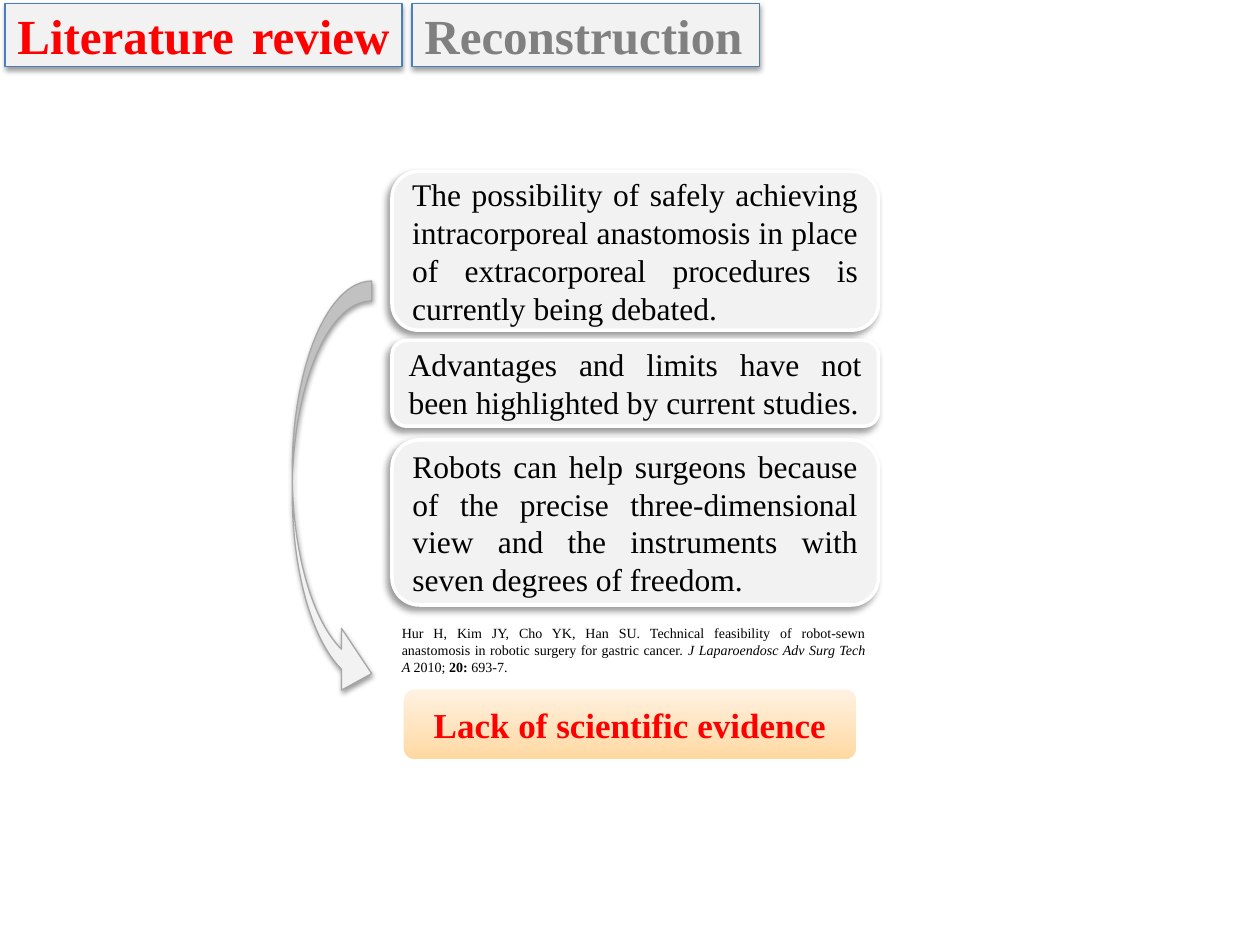
from lxml.etree import SubElement
from pptx import Presentation
from pptx.dml.color import RGBColor
from pptx.enum.shapes import MSO_SHAPE
from pptx.enum.text import MSO_ANCHOR, MSO_AUTO_SIZE, PP_ALIGN
from pptx.oxml.ns import qn
from pptx.util import Pt

WHITE = RGBColor(0xFF, 0xFF, 0xFF)
BLACK = RGBColor(0x00, 0x00, 0x00)
RED = RGBColor(0xFF, 0x00, 0x00)
GRAY = RGBColor(0x80, 0x80, 0x80)
PANEL = RGBColor(0xF2, 0xF2, 0xF2)
ARROW_LINE = RGBColor(0xA6, 0xA6, 0xA6)
TAB_LINE = RGBColor(0x4B, 0x7E, 0xBC)
PEACH = RGBColor(0xFF, 0xD8, 0xA0)
CREAM = RGBColor(0xFF, 0xF2, 0xE3)

FONT = "Times New Roman"
TAB_SHADOW = {"opacity": 38, "blur": 3.1, "distance": 1.6, "angle": 90}
STATEMENT_SHADOW = {"opacity": 40, "blur": 4, "distance": 3, "angle": 135}

TABS = [("Literature review ", RED, 226.8), ("Reconstruction ", GRAY, 198.7)]
STATEMENTS = [
    ("The possibility of safely achieving intracorporeal anastomosis in place "
     "of extracorporeal procedures is currently being debated.", 0, 90.7),
    ("Advantages and limits have not been highlighted by current studies.", 96.5, 49),
    ("Robots can help surgeons because of the precise three-dimensional view "
     "and the instruments with seven degrees of freedom.", 153.4, 94.3),
]
CITATION = [
    ("Hur H, Kim JY, Cho YK, Han SU. Technical feasibility of robot-sewn "
     "anastomosis in robotic surgery for gastric cancer. ", {}),
    ("J Laparoendosc Adv Surg Tech A ", {"italic": True}),
    ("2010; ", {}),
    ("20:", {"bold": True}),
    (" 693-7.", {}),
]


def set_values(target, values):
    for name, value in values.items():
        setattr(target, name, value)


def add_run(paragraph, text, size, color, **values):
    run = paragraph.add_run()
    run.text = text
    set_values(run.font, {"name": FONT, "size": Pt(size), **values})
    run.font.color.rgb = color


def add_shadow(shape, opacity, blur, distance, angle):
    effects = shape._element.spPr.find(qn("a:effectLst"))
    shadow = SubElement(effects, qn("a:outerShdw"), {
        "blurRad": str(Pt(blur)), "dist": str(Pt(distance)),
        "dir": str(angle * 60000), "rotWithShape": "0",
    })
    color = SubElement(shadow, qn("a:srgbClr"), val=str(BLACK))
    SubElement(color, qn("a:alpha"), val=str(opacity * 1000))


def add_panel(slide, kind, box, line_color, line_width, shadow=None):
    shape = slide.shapes.add_shape(kind, *map(Pt, box))
    shape.shadow.inherit = False
    shape.fill.solid()
    shape.fill.fore_color.rgb = PANEL
    shape.line.color.rgb = line_color
    shape.line.width = Pt(line_width)
    if shadow:
        add_shadow(shape, **shadow)
    return shape


def add_label(shape, text, size, color, alignment=PP_ALIGN.JUSTIFY, **values):
    set_values(shape.text_frame, {"word_wrap": True, "vertical_anchor": MSO_ANCHOR.MIDDLE})
    paragraph = shape.text_frame.paragraphs[0]
    paragraph.alignment = alignment
    add_run(paragraph, text, size, color, **values)


def add_tabs(slide, left, top, height, gap):
    for text, color, width in TABS:
        tab = add_panel(slide, MSO_SHAPE.RECTANGLE, (left, top, width, height),
                        TAB_LINE, 0.75, TAB_SHADOW)
        add_label(tab, text, 28, color, bold=True)
        left += width + gap


def add_statements(slide, left, top, width):
    for text, offset, height in STATEMENTS:
        statement = add_panel(slide, MSO_SHAPE.ROUNDED_RECTANGLE,
                              (left, top + offset, width, height),
                              WHITE, 2, STATEMENT_SHADOW)
        add_label(statement, text, 18, BLACK)


def add_citation(slide, box):
    frame = slide.shapes.add_textbox(*map(Pt, box)).text_frame
    set_values(frame, {"word_wrap": True, "auto_size": MSO_AUTO_SIZE.SHAPE_TO_FIT_TEXT})
    paragraph = frame.paragraphs[0]
    paragraph.alignment = PP_ALIGN.JUSTIFY
    for text, values in CITATION:
        add_run(paragraph, text, 8, BLACK, **values)


def add_conclusion(slide, box):
    conclusion = add_panel(slide, MSO_SHAPE.ROUNDED_RECTANGLE, box, WHITE, 2)
    conclusion.fill.gradient()
    conclusion.fill.gradient_angle = 90
    for stop, color in zip(conclusion.fill.gradient_stops, (PEACH, CREAM)):
        stop.color.rgb = color
    add_label(conclusion, "Lack of scientific evidence", 20, RED,
              PP_ALIGN.CENTER, bold=True)


def add_arrow(slide, box):
    arrow = add_panel(slide, MSO_SHAPE.CURVED_RIGHT_ARROW, box,
                      ARROW_LINE, 0.75, TAB_SHADOW)
    for index, value in enumerate((0.25, 0.78, 0.38)):
        arrow.adjustments[index] = value


def main():
    presentation = Presentation()
    set_values(presentation, {"slide_width": Pt(720), "slide_height": Pt(540)})
    slide = presentation.slides.add_slide(presentation.slide_layouts[6])
    add_tabs(slide, left=2.9, top=2, height=36, gap=5.8)
    add_statements(slide, left=224, top=98, width=278)
    add_citation(slide, (222.5, 353.5, 279.4, 36))
    add_conclusion(slide, (229.7, 393, 260.6, 41.8))
    add_arrow(slide, (167, 160.6, 45.4, 242))
    presentation.save("out.pptx")


if __name__ == "__main__":
    main()
